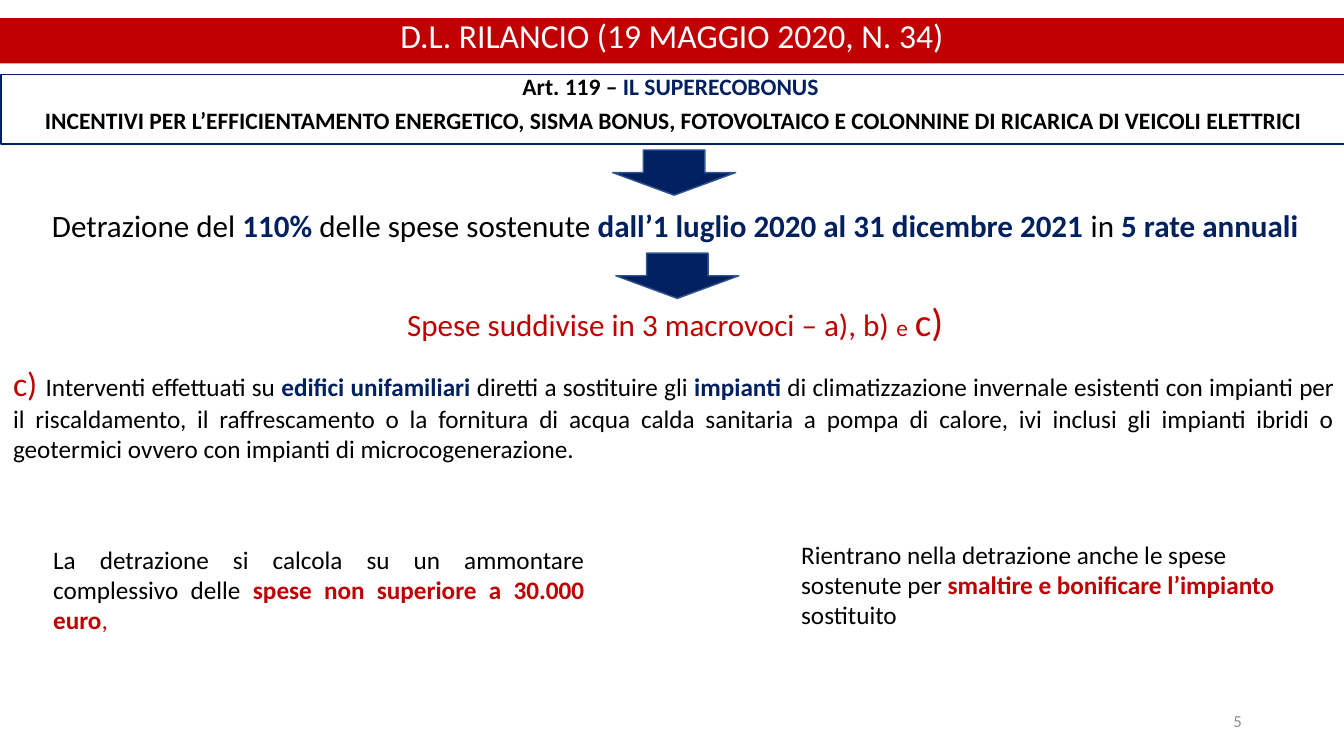
import pptx
import pptx.util
import pptx.dml.color
import pptx.enum.shapes
import pptx.enum.text

Cm, Pt = pptx.util.Cm, pptx.util.Pt
ALIGN = pptx.enum.text.PP_ALIGN
ANCHOR = pptx.enum.text.MSO_ANCHOR
SHAPE = pptx.enum.shapes.MSO_SHAPE

COLORS = {"red": "C00000", "navy": "002060", "edge": "325491",
          "black": "000000", "white": "FFFFFF", "gray": "8C8C8C"}
WIDTH, HEIGHT = 33.87, 19.05
BAND = 1.14
ARROW_SIZE = (3.1, 1.14)

TITLE = [[("D.L. RILANCIO (19 MAGGIO 2020, N. 34)", "white")]]
ARTICLE = [
    [("Art. 119 – ", "black", True), ("IL SUPERECOBONUS ", "navy", True)],
    [("INCENTIVI PER L’EFFICIENTAMENTO ENERGETICO, SISMA BONUS, FOTOVOLTAICO "
      "E COLONNINE DI RICARICA DI VEICOLI ELETTRICI", "black", True)],
]
DEDUCTION = [[
    ("Detrazione del ", "black"), ("110%", "navy", True),
    (" delle spese sostenute ", "black"),
    ("dall’1 luglio 2020 al 31 dicembre 2021 ", "navy", True),
    ("in ", "black"), ("5 rate annuali", "navy", True),
]]
CATEGORIES = [[
    ("Spese suddivise in 3 macrovoci – a), b) ", "red"),
    ("e", "red", False, 16.6), (" ", "red"), ("c)", "red", False, 27.8),
]]
WORKS = [[
    ("c) ", "red", False, 24), ("Interventi effettuati su ", "black"),
    ("edifici unifamiliari ", "navy", True),
    ("diretti a sostituire gli ", "black"), ("impianti", "navy", True),
    (" di climatizzazione invernale esistenti con impianti per il riscaldamento, "
     "il raffrescamento o la fornitura di acqua calda sanitaria a pompa di calore, "
     "ivi inclusi gli impianti ibridi o geotermici ovvero con impianti di "
     "microcogenerazione.", "black"),
]]
LIMIT = [[
    ("La detrazione si calcola su un ammontare complessivo delle ", "black"),
    ("spese non superiore a 30.000 euro", "red", True), (", ", "red"),
]]
DISPOSAL = [[
    ("Rientrano nella detrazione anche le spese sostenute per ", "black"),
    ("smaltire e bonificare l’impianto ", "red", True), ("sostituito", "black"),
]]
PAGE = [[("5", "gray")]]

TEXTS = [
    (WORKS, (0.08, 9.02, 33.8, 2.82), 18, ALIGN.JUSTIFY, None),
    (DEDUCTION, (0.08, 5.18, WIDTH, BAND), 22.2, ALIGN.CENTER, 0.9),
    (CATEGORIES, (0.08, 7.7, WIDTH, BAND), 22.2, ALIGN.CENTER, 0.7),
    (LIMIT, (1.09, 13.59, 13.89, 2.57), 18, ALIGN.JUSTIFY, None),
    (DISPOSAL, (19.94, 13.46, 12.47, 2.57), 18, ALIGN.LEFT, None),
]
ARROWS = [(15.44, 3.78), (15.52, 6.38)]


def rgb(name):
    return pptx.dml.color.RGBColor.from_string(COLORS[name])


def write(sp, paragraphs, size, align, spacing=None, anchor=ANCHOR.TOP):
    tf = sp.text_frame
    tf.word_wrap = True
    tf.vertical_anchor = anchor
    for i, runs in enumerate(paragraphs):
        p = tf.add_paragraph() if i else tf.paragraphs[0]
        p.alignment = align
        p.font.name = "Calibri"
        p.font.size = Pt(size)
        if spacing:
            p.line_spacing = spacing
            p.space_before = Pt(10)
        for text, color, *style in runs:
            bold, run_size = (style + [False, size][len(style):])
            r = p.add_run()
            r.text = text
            r.font.name = "Calibri"
            r.font.size = Pt(run_size)
            r.font.bold = bold
            r.font.color.rgb = rgb(color)


def add_text(s, paragraphs, box, *style):
    write(s.shapes.add_textbox(*map(Cm, box)), paragraphs, *style)


def add_shape(s, kind, box, fill, line=None):
    sp = s.shapes.add_shape(kind, *map(Cm, box))
    sp.shadow.inherit = False
    sp.fill.solid()
    sp.fill.fore_color.rgb = rgb(fill)
    if line:
        sp.line.color.rgb = rgb(line)
        sp.line.width = Pt(1)
    else:
        sp.line.fill.background()
    return sp


def main():
    prs = pptx.Presentation()
    prs.slide_width, prs.slide_height = Cm(WIDTH), Cm(HEIGHT)
    s = prs.slides.add_slide(prs.slide_layouts[6])

    title = add_shape(s, SHAPE.RECTANGLE, (0, 0.46, WIDTH, BAND), "red")
    write(title, TITLE, 24, ALIGN.CENTER, 0.8)
    for text in TEXTS:
        add_text(s, *text)
    for corner in ARROWS:
        add_shape(s, SHAPE.DOWN_ARROW, corner + ARROW_SIZE, "navy", "edge")
    article = add_shape(s, SHAPE.RECTANGLE, (0.03, 1.88, WIDTH, 1.75), "white", "navy")
    write(article, ARTICLE, 16.8, ALIGN.CENTER, 0.7)
    add_text(s, PAGE, (23.93, 17.65, 7.62, 1.02), 12, ALIGN.RIGHT, None, ANCHOR.MIDDLE)

    prs.save("out.pptx")


if __name__ == "__main__":
    main()
